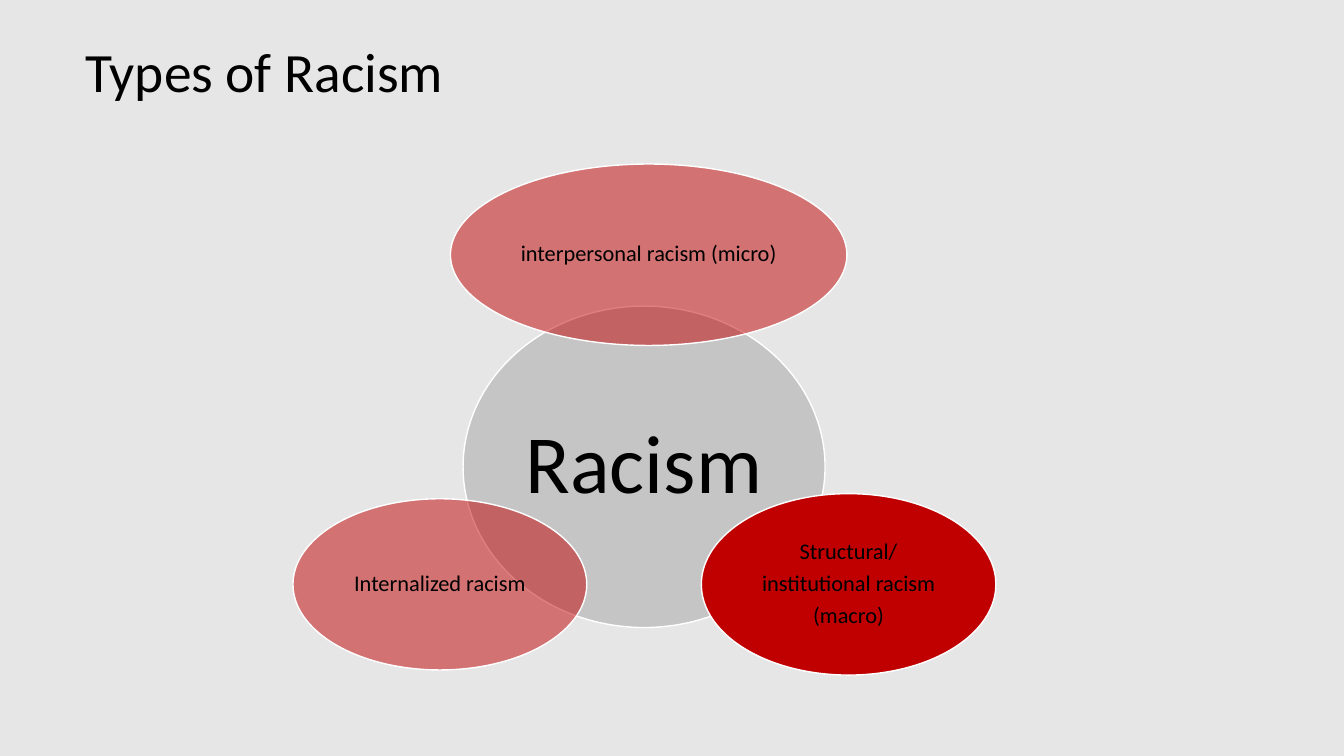
from collections import namedtuple

from lxml.etree import SubElement
from pptx import Presentation
from pptx.dml.color import RGBColor
from pptx.enum.shapes import MSO_SHAPE
from pptx.enum.text import MSO_ANCHOR, MSO_AUTO_SIZE, PP_ALIGN
from pptx.oxml.ns import qn
from pptx.util import Inches, Pt

COLORS = {"page": "E7E6E6", "hub": "A5A5A5", "type": "C00000", "outline": "FFFFFF", "text": "000000"}
FONT = "Calibri"
LINE_SPACING = 0.9
SPACE_AFTER_SHARE = 0.35
TITLE_ONLY = 5

Box = namedtuple("Box", "left top width height")

RACISM_TYPES = [
    ("interpersonal racism (micro)", (22.4, 0, 56.4, 35.5), 50),
    ("Structural/\ninstitutional racism\n(macro)", (58.1, 64.5, 41.9, 35.5), 100),
    ("Internalized racism", (0, 65.5, 41.8, 33.5), 50),
]


def color(name):
    """Return a named colour."""
    return RGBColor.from_string(COLORS[name])


def part(box, left, top, width, height):
    """Return the part of a box given in percent of its size."""
    return Box(
        round(box.left + box.width * left / 100),
        round(box.top + box.height * top / 100),
        round(box.width * width / 100),
        round(box.height * height / 100),
    )


def write(shape, text, size, align=PP_ALIGN.CENTER, inset=0.02, space_after=0):
    """Fill a shape with formatted paragraphs, one for each line of text."""
    frame = shape.text_frame
    frame.text = text
    frame.word_wrap = True
    frame.auto_size = MSO_AUTO_SIZE.NONE
    frame.vertical_anchor = MSO_ANCHOR.MIDDLE
    frame.margin_left = frame.margin_right = Inches(inset)
    frame.margin_top = frame.margin_bottom = Inches(inset)
    for para in frame.paragraphs:
        para.alignment = align
        para.line_spacing = LINE_SPACING
        para.space_before = Pt(0)
        para.space_after = Pt(size * space_after)
        para.font.name = FONT
        para.font.size = Pt(size)
        para.font.color.rgb = color("text")


def add_ellipse(page, box, text, fill, size=16, opacity=100, inset=0.02):
    """Draw a labelled ellipse that fills its box."""
    ellipse = page.shapes.add_shape(MSO_SHAPE.OVAL, *box)
    ellipse.shadow.inherit = False
    ellipse.fill.solid()
    ellipse.fill.fore_color.rgb = color(fill)
    if opacity < 100:
        tint = ellipse.fill._xPr.find(qn("a:solidFill"))[0]
        SubElement(tint, qn("a:alpha")).set("val", str(opacity * 1000))
    ellipse.line.color.rgb = color("outline")
    ellipse.line.width = Pt(1)
    write(ellipse, text, size, inset=inset, space_after=SPACE_AFTER_SHARE)


def add_title(page, box, text):
    """Place the slide title in its box."""
    title = page.shapes.title
    title.left, title.top, title.width, title.height = box
    write(title, text, 39.6, align=PP_ALIGN.LEFT, inset=0.1)


def add_diagram(page, box):
    """Draw the central circle and the overlapping types around it."""
    add_ellipse(page, part(box, 24.2, 27.8, 51.5, 62.9), "Racism", "hub", size=59, opacity=50, inset=0.08)
    for text, place, opacity in RACISM_TYPES:
        add_ellipse(page, part(box, *place), text, "type", opacity=opacity)


def main():
    """Build and save the slide."""
    deck = Presentation()
    deck.slide_width, deck.slide_height = Inches(13.33), Inches(7.5)
    page = deck.slides.add_slide(deck.slide_layouts[TITLE_ONLY])
    page.background.fill.solid()
    page.background.fill.fore_color.rgb = color("page")
    whole = Box(0, 0, deck.slide_width, deck.slide_height)
    add_title(page, part(whole, 5.6, 4.9, 77.7, 10), "Types of Racism")
    add_diagram(page, part(whole, 21.8, 21.7, 52.3, 67.6))
    deck.save("out.pptx")


if __name__ == "__main__":
    main()
